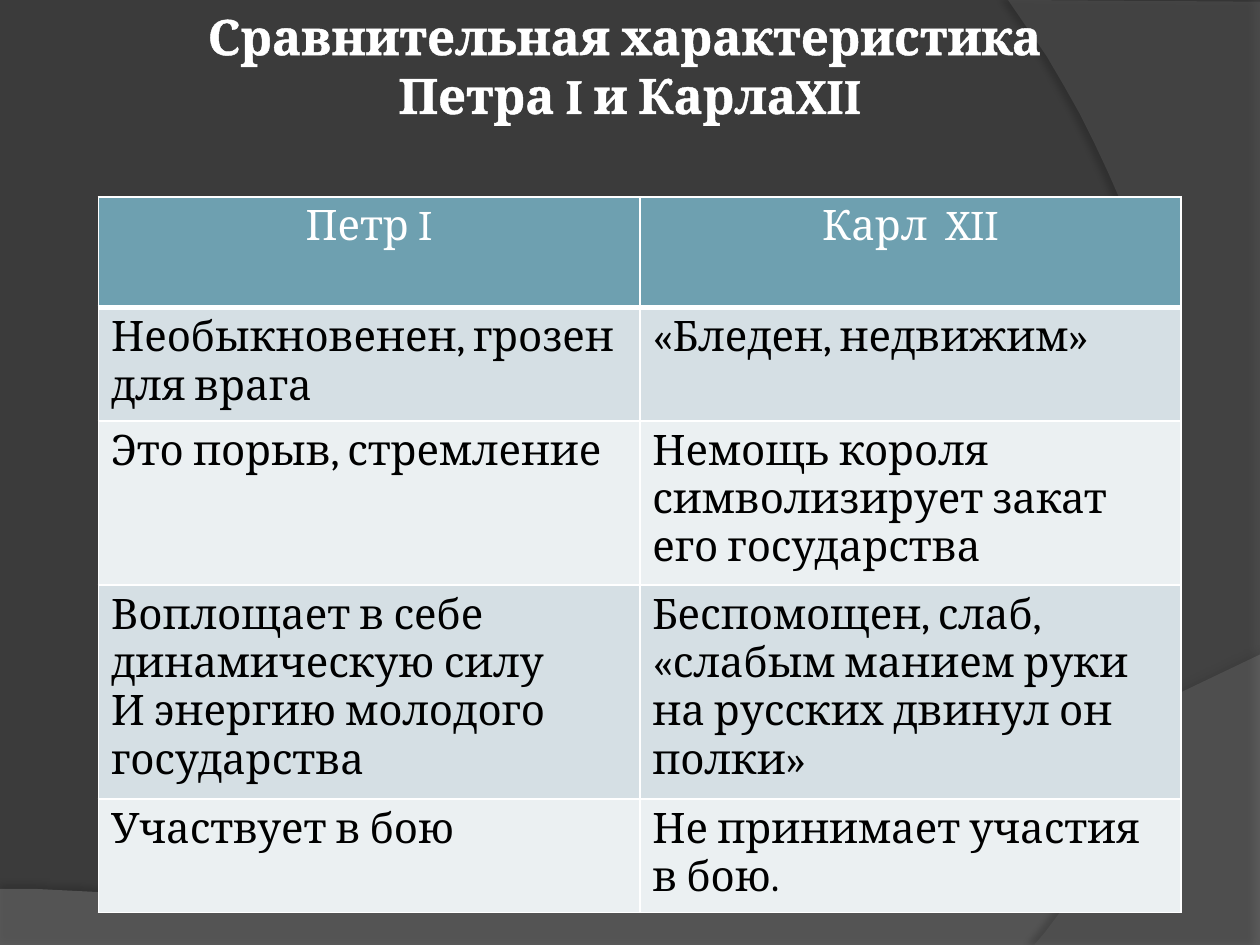
from lxml import etree
from pptx import Presentation
from pptx.dml.color import RGBColor
from pptx.enum import text
from pptx.oxml import parse_xml
from pptx.oxml.ns import nsdecls, qn
from pptx.util import Pt

FONT = "Cambria"
COLORS = {
    "background": "3B3B3B", "wave": "7F7F7F", "arc": "5E5E5E",
    "shadow": "000000", "light": "FFFFFF", "dark": "000000",
    "header": "6EA0B0", "odd": "D5DFE4", "even": "EBF0F2",
}
ROWS = [
    (["Петр I"], ["Карл  XII"]),
    (["Необыкновенен, грозен для врага"], ["«Бледен, недвижим»"]),
    (["Это порыв, стремление"],
     ["Немощь короля символизирует закат его государства"]),
    (["Воплощает в себе динамическую силу", "И энергию молодого государства"],
     ["Беспомощен, слаб, «слабым манием руки на русских двинул он полки»"]),
    (["Участвует в бою"], ["Не принимает участия в бою."]),
]


def rgb(name):
    return RGBColor.from_string(COLORS[name])


def line_xml(tag, color, width):
    return parse_xml(
        f'<a:{tag} {nsdecls("a")} w="{Pt(width)}"><a:solidFill>'
        f'<a:srgbClr val="{COLORS[color]}"/></a:solidFill></a:{tag}>')


def curve(p0, p1, p2, p3, steps=40):
    """Points along a cubic Bezier curve."""
    points = []
    for i in range(steps + 1):
        t = i / steps
        weights = ((1 - t) ** 3, 3 * t * (1 - t) ** 2, 3 * t * t * (1 - t), t ** 3)
        points.append(tuple(sum(w * p[axis] for w, p in zip(weights, (p0, p1, p2, p3)))
                            for axis in (0, 1)))
    return points


def add_backdrop_shape(s, points, color, opacity, shadow):
    builder = s.shapes.build_freeform(*points[0], scale=Pt(1))
    builder.add_line_segments(points[1:], close=True)
    sp = builder.convert_to_shape()
    sp.fill.solid()
    sp.fill.fore_color.rgb = rgb(color)
    sp.line.fill.background()
    fill_color = sp.fill._xPr.find(qn("a:solidFill"))[0]
    etree.SubElement(fill_color, qn("a:alpha"), val=str(opacity * 1000))
    alpha, blur, distance, angle = shadow
    sp.shadow.inherit = False
    effects = sp._element.spPr.find(qn("a:effectLst"))
    effects.append(parse_xml(
        f'<a:outerShdw {nsdecls("a")} blurRad="{Pt(blur)}" dist="{Pt(distance)}" '
        f'dir="{angle * 60000}" algn="ctr" rotWithShape="0">'
        f'<a:srgbClr val="{COLORS["shadow"]}"><a:alpha val="{alpha * 1000}"/>'
        f'</a:srgbClr></a:outerShdw>'))


def add_backdrop(s, width, height):
    s.background.fill.solid()
    s.background.fill.fore_color.rgb = rgb("background")
    wave = curve((width, 374.4), (402.5, 524.9), (281.5, 517.7), (0, 507.6))
    add_backdrop_shape(s, [(0, height + 0.7), (width, height + 0.7)] + wave,
                       "wave", 45, (35, 4, 3.5, 270))
    arc = curve((591.1, height), (673.2, 445.7), (733, 216), (576, 0))
    add_backdrop_shape(s, [(width, 1.4), (width, height)] + arc,
                       "arc", 40, (45, 4, 4, 180))


def add_paragraphs(tf, lines, size, color, bold=False, centered=False):
    for i, line in enumerate(lines):
        p = tf.paragraphs[0] if i == 0 else tf.add_paragraph()
        if centered:
            p.alignment = text.PP_ALIGN.CENTER
        r = p.add_run()
        r.text = line
        r.font.name, r.font.size, r.font.bold = FONT, Pt(size), bold
        r.font.color.rgb = rgb(color)


def add_title(s, left, top, width, height):
    tf = s.shapes.add_textbox(Pt(left), Pt(top), Pt(width), Pt(height)).text_frame
    tf.word_wrap = True
    tf.auto_size = text.MSO_AUTO_SIZE.SHAPE_TO_FIT_TEXT
    add_paragraphs(tf, ["Сравнительная характеристика ", "Петра I и КарлаXII"],
                   28, "light", bold=True, centered=True)
    for p in tf.paragraphs:
        for r in p.runs:
            r.font._element.insert(0, line_xml("ln", "light", 2.48))


def add_comparison(s, left, top, width, row_height):
    table = s.shapes.add_table(len(ROWS), 2, Pt(left), Pt(top), Pt(width),
                               Pt(row_height * len(ROWS))).table
    for column in table.columns:
        column.width = Pt(width / 2)
    for i, row in enumerate(ROWS):
        table.rows[i].height = Pt(row_height)
        header = i == 0
        fill = "header" if header else "odd" if i % 2 else "even"
        for j, lines in enumerate(row):
            cell = table.cell(i, j)
            cell.fill.solid()
            cell.fill.fore_color.rgb = rgb(fill)
            add_paragraphs(cell.text_frame, lines, 24,
                           "light" if header else "dark", centered=header)
            for k, side in enumerate("LRTB"):
                thick = header and side == "B"
                cell._tc.get_or_add_tcPr().insert(
                    k, line_xml(f"ln{side}", "light", 3 if thick else 1))


def main():
    prs = Presentation()
    prs.slide_width, prs.slide_height = Pt(720), Pt(540)
    s = prs.slides.add_slide(prs.slide_layouts[6])
    add_backdrop(s, 720, 540)
    add_title(s, 0, 0, 720, 75)
    add_comparison(s, 56.25, 112.5, 618.7, 63.3)
    prs.save("out.pptx")


if __name__ == "__main__":
    main()
